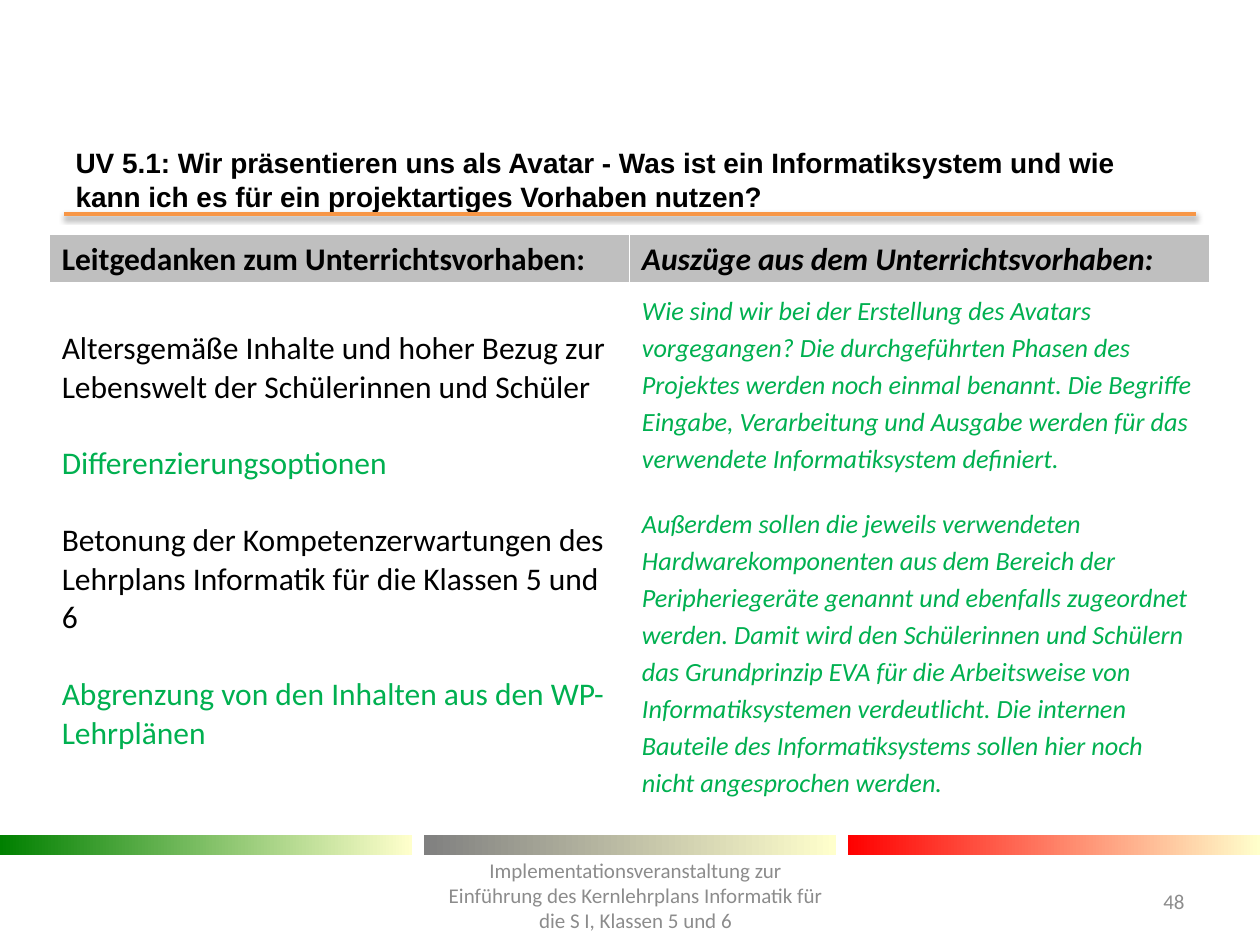
from lxml.etree import SubElement
from pptx import Presentation
from pptx.dml.color import RGBColor
from pptx.enum.shapes import MSO_CONNECTOR, MSO_SHAPE
from pptx.enum.text import MSO_ANCHOR, PP_ALIGN
from pptx.oxml import parse_xml
from pptx.oxml.ns import nsdecls, qn
from pptx.util import Inches, Pt

BLACK = RGBColor(0x00, 0x00, 0x00)
GREEN = RGBColor(0x00, 0xB0, 0x50)
FOOTER_GREY = RGBColor(0x8C, 0x8C, 0x8C)
HEADER_GREY = RGBColor(0xBF, 0xBF, 0xBF)
ORANGE = RGBColor(0xF7, 0x96, 0x46)
CREAM = RGBColor(0xFF, 0xFF, 0xCC)
BAR_COLORS = [RGBColor(0x00, 0x80, 0x00), RGBColor(0x80, 0x80, 0x80),
              RGBColor(0xFF, 0x00, 0x00)]

TITLE = ("UV 5.1: Wir präsentieren uns als Avatar - Was ist ein Informatiksystem "
         "und wie kann ich es für ein projektartiges Vorhaben nutzen?")
HEADINGS = [("Leitgedanken zum Unterrichtsvorhaben:", False),
            ("Auszüge aus dem Unterrichtsvorhaben:", True)]
GUIDING_IDEAS = [
    ("Altersgemäße Inhalte und hoher Bezug zur Lebenswelt der Schülerinnen "
     "und Schüler", BLACK),
    ("Differenzierungsoptionen", GREEN),
    ("Betonung der Kompetenzerwartungen des Lehrplans Informatik für die "
     "Klassen 5 und 6", BLACK),
    ("Abgrenzung von den Inhalten aus den WP-Lehrplänen", GREEN),
]
EXCERPTS = [
    ("Wie sind wir bei der Erstellung des Avatars vorgegangen? Die durchgeführten "
     "Phasen des Projektes werden noch einmal benannt. Die Begriffe Eingabe, "
     "Verarbeitung und Ausgabe werden für das verwendete Informatiksystem "
     "definiert.", GREEN),
    ("Außerdem sollen die jeweils verwendeten Hardwarekomponenten aus dem Bereich "
     "der Peripheriegeräte genannt und ebenfalls zugeordnet werden. Damit wird den "
     "Schülerinnen und Schülern das Grundprinzip EVA für die Arbeitsweise von "
     "Informatiksystemen verdeutlicht. Die internen Bauteile des Informatiksystems "
     "sollen hier noch nicht angesprochen werden.", GREEN),
]
FOOTER = ("Implementationsveranstaltung zur Einführung des Kernlehrplans Informatik "
          "für die S I, Klassen 5 und 6")
PAGE_NUMBER = "48"

SLIDE_WIDTH, SLIDE_HEIGHT = 10, 7.5
MARGIN = 0.5
BAR_TOP, BAR_WIDTH, BAR_HEIGHT = 6.63, 3.27, 0.16
TABLE_BOX = (0.39, 1.86, 9.21, 4.64)
ROW_HEIGHTS = (0.38, 4.26)
IDEA_GAP = 22  # one line of 18 pt text


def box(*lengths):
    return [Inches(length) for length in lengths]


def set_font(paragraph, **values):
    color = values.pop("color")
    for attribute, value in values.items():
        setattr(paragraph.font, attribute, value)
    paragraph.font.color.rgb = color


def fill_frame(frame, paragraphs, spacing=None, **font):
    """Write (text, color) pairs; spacing skips space_before on the first."""
    for index, (text, color) in enumerate(paragraphs):
        paragraph = frame.paragraphs[0] if index == 0 else frame.add_paragraph()
        paragraph.text = text
        for attribute, value in (spacing or {}).items():
            if index or attribute != "space_before":
                setattr(paragraph, attribute, value)
        set_font(paragraph, color=color, **font)


def add_title(slide):
    title = slide.shapes.title
    title.left, title.top, title.width, title.height = box(
        MARGIN, 1.23, SLIDE_WIDTH - 2 * MARGIN, 0.39)
    title.text_frame.vertical_anchor = MSO_ANCHOR.MIDDLE
    title.text_frame.word_wrap = True
    fill_frame(title.text_frame, [(TITLE, BLACK)], {"alignment": PP_ALIGN.LEFT},
               name="Arial", size=Pt(16), bold=True)


def add_title_rule(slide):
    rule = slide.shapes.add_connector(
        MSO_CONNECTOR.STRAIGHT, *box(MARGIN + 0.01, 1.7, SLIDE_WIDTH - MARGIN - 0.01, 1.7))
    rule.line.color.rgb = ORANGE
    rule.line.width = Pt(2)
    rule._element.spPr.append(parse_xml(
        f'<a:effectLst {nsdecls("a")}><a:outerShdw blurRad="40000" dist="20000" '
        'dir="5400000" rotWithShape="0"><a:srgbClr val="000000">'
        '<a:alpha val="38000"/></a:srgbClr></a:outerShdw></a:effectLst>'))


def add_bars(slide):
    step = (SLIDE_WIDTH - BAR_WIDTH) / (len(BAR_COLORS) - 1)
    for index, color in enumerate(BAR_COLORS):
        bar = slide.shapes.add_shape(
            MSO_SHAPE.RECTANGLE, *box(index * step, BAR_TOP, BAR_WIDTH, BAR_HEIGHT))
        bar.shadow.inherit = False
        bar.line.fill.background()
        bar.fill.gradient()
        bar.fill.gradient_angle = 0
        for stop, position, shade in zip(bar.fill.gradient_stops, (0, 1), (color, CREAM)):
            stop.position = position
            stop.color.rgb = shade


def add_borders(cell, bottom):
    properties = cell._tc.get_or_add_tcPr()
    for side, width in (("L", 1), ("R", 1), ("T", 1), ("B", bottom)):
        border = SubElement(properties, qn(f"a:ln{side}"), w=str(Pt(width)))
        SubElement(SubElement(border, qn("a:solidFill")), qn("a:srgbClr"), val="FFFFFF")


def add_comparison(slide):
    table = slide.shapes.add_table(2, 2, *box(*TABLE_BOX)).table
    table.horz_banding = False
    for row, height in zip(table.rows, ROW_HEIGHTS):
        row.height = Inches(height)

    for column, (heading, italic) in enumerate(HEADINGS):
        cell = table.cell(0, column)
        add_borders(cell, bottom=3)
        cell.fill.solid()
        cell.fill.fore_color.rgb = HEADER_GREY
        fill_frame(cell.text_frame, [(heading, BLACK)],
                   name="Calibri", size=Pt(18), bold=True, italic=italic)

    ideas, excerpts = table.cell(1, 0), table.cell(1, 1)
    for cell in (ideas, excerpts):
        add_borders(cell, bottom=1)
        cell.fill.background()
    ideas.margin_top = Inches(0.05) + Pt(IDEA_GAP)
    fill_frame(ideas.text_frame, GUIDING_IDEAS, {"space_before": Pt(IDEA_GAP)},
               name="Calibri", size=Pt(18), bold=False)
    fill_frame(excerpts.text_frame, EXCERPTS,
               {"line_spacing": 1.15, "space_before": Pt(6), "space_after": Pt(10)},
               name="Calibri", size=Pt(15), bold=False, italic=True)


def add_footer_text(slide, text, place, alignment):
    frame = slide.shapes.add_textbox(*box(*place)).text_frame
    frame.word_wrap = True
    frame.vertical_anchor = MSO_ANCHOR.MIDDLE
    fill_frame(frame, [(text, FOOTER_GREY)], {"alignment": alignment},
               name="Calibri", size=Pt(12))


def main():
    presentation = Presentation()
    presentation.slide_width, presentation.slide_height = box(SLIDE_WIDTH, SLIDE_HEIGHT)
    slide = presentation.slides.add_slide(presentation.slide_layouts[5])
    add_title_rule(slide)
    add_bars(slide)
    add_title(slide)
    add_footer_text(slide, PAGE_NUMBER, (8.86, 6.95, 0.64, 0.4), PP_ALIGN.RIGHT)
    add_comparison(slide)
    add_footer_text(slide, FOOTER, (3.43, 6.82, 3.23, 0.57), PP_ALIGN.CENTER)
    presentation.save("out.pptx")


if __name__ == "__main__":
    main()
